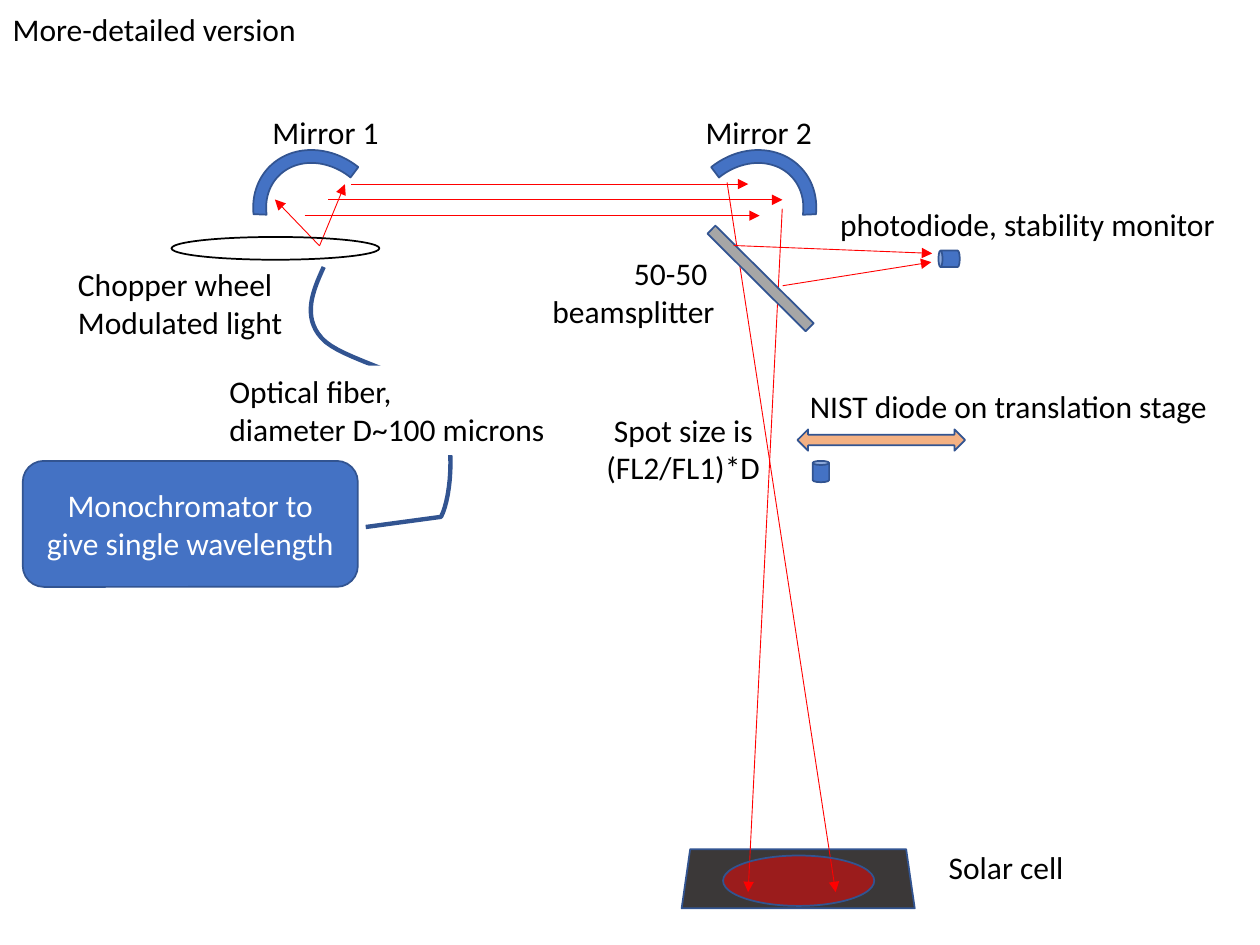
from lxml.etree import SubElement as Sub
from pptx import Presentation
from pptx.dml.color import RGBColor as RGB
from pptx.enum.shapes import MSO_CONNECTOR as Conn, MSO_SHAPE as Form
from pptx.enum.text import MSO_ANCHOR as Anchor, MSO_AUTO_SIZE as Fit, PP_ALIGN as Align
from pptx.oxml.ns import qn
from pptx.util import Pt

BLUE = RGB(0x44, 0x72, 0xC4)
NAVY = RGB(0x32, 0x54, 0x91)
RED = RGB(0xFF, 0, 0)
BLACK = RGB(0, 0, 0)
WHITE = RGB(0xFF, 0xFF, 0xFF)
GREY = RGB(0xA6, 0xA6, 0xA6)
DARK = RGB(0x3B, 0x38, 0x38)
PEACH = RGB(0xF4, 0xB1, 0x83)
LINE = 29   # height of a one-line label
PAIR = 51   # height of a two-line label
CAN = (9.4, 12.2)


def write(frame, lines, color=BLACK, align=Align.LEFT):
    frame.text = "\n".join(lines)
    for para in frame.paragraphs:
        para.alignment = align
        para.font.name = "Calibri"
        para.font.size = Pt(18)
        para.font.color.rgb = color


def label(slide, x, y, w, lines, align=Align.LEFT):
    high = LINE if len(lines) == 1 else PAIR
    box = slide.shapes.add_textbox(Pt(x), Pt(y), Pt(w), Pt(high))
    write(box.text_frame, lines, align=align)
    box.text_frame.word_wrap = False
    box.text_frame.auto_size = Fit.SHAPE_TO_FIT_TEXT
    return box


def paint(shape, fill, line=NAVY, width=1):
    shape.shadow.inherit = False
    if fill is None:
        shape.fill.background()
    else:
        shape.fill.solid()
        shape.fill.fore_color.rgb = fill
    shape.line.color.rgb = line
    shape.line.width = Pt(width)


def add(slide, form, x, y, w, h, fill, line=NAVY, turn=0):
    shape = slide.shapes.add_shape(form, Pt(x), Pt(y), Pt(w), Pt(h))
    paint(shape, fill, line)
    shape.rotation = turn
    return shape


def ray(slide, x1, y1, x2, y2):
    """Draw a thin red light ray with its arrowhead at the second point."""
    line = slide.shapes.add_connector(Conn.STRAIGHT, Pt(x1), Pt(y1), Pt(x2), Pt(y2))
    line.line.color.rgb = RED
    line.line.width = Pt(0.5)
    props = line._element.spPr
    Sub(props.find(qn("a:ln")), qn("a:tailEnd"), type="triangle")
    Sub(props, qn("a:effectLst"))


def curve(p0, p1, p2, p3, steps=16):
    """Return points along a cubic Bezier curve, without its start."""
    points = []
    for i in range(1, steps + 1):
        t = i / steps
        u = 1 - t
        points.append(tuple(
            u**3 * a + 3 * u * u * t * b + 3 * u * t * t * c + t**3 * d
            for a, b, c, d in zip(p0, p1, p2, p3)))
    return points


def header(slide, x, y, w, h):
    title = slide.shapes.title
    title.left, title.top, title.width, title.height = Pt(x), Pt(y), Pt(w), Pt(h)
    write(title.text_frame, ["More-detailed version"])
    title.text_frame.vertical_anchor = Anchor.TOP
    title.text_frame.auto_size = Fit.NONE


def mirrors(slide, x, y, w):
    size = 71.3
    for left, turn in ((x, 313.5), (x + w - size, 46.5)):
        arc = add(slide, Form.BLOCK_ARC, left, y + 22, size, 82, BLUE, turn=turn)
        for i, value in enumerate((137.326, 212.143, 0.104)):
            arc.adjustments[i] = value
    arc._element.spPr.find(qn("a:xfrm")).set("flipH", "1")
    for dx, dy in ((9.5, 53), (49.5, 44.3)):
        ray(slide, x + 35, y + 79.5, x + dx, y + dy)
    for row, (start, end) in enumerate(((53, 280), (40, 299.5), (26.5, 286.5))):
        dy = y + 44.2 + 9 * row
        ray(slide, x + start, dy, x + end, dy)
    for left, text in ((x + 1, "Mirror 1"), (x + 248.5, "Mirror 2")):
        label(slide, left, y, 75, [text])


def cell(slide, x, y, w, h):
    """Draw the solar cell, the rays focused on it and the lit spot."""
    plate = add(slide, Form.TRAPEZOID, x, y, w, h, DARK)
    plate.adjustments[0] = 0.145
    ray(slide, x + 26, y - 381, x + 88, y + 24.5)
    ray(slide, x + 57.5, y - 366, x + 38, y + 24.5)
    spot = add(slide, Form.OVAL, x + 23.7, y + 3.6, 86.4, 28.8, RED)
    tint = spot._element.spPr.find(qn("a:solidFill"))[0]
    Sub(tint, qn("a:alpha"), val="49000")
    label(slide, x + 145.5, y - 4.5, 85, ["Solar cell"])


def source(slide, x, y):
    """Draw the monochromator, the fiber and the chopper wheel."""
    add(slide, Form.OVAL, x + 85, y, 118.8, 13, None, BLACK)
    label(slide, x + 24.5, y + 12.5, 132.5, ["Chopper wheel", "Modulated light"])

    box = add(slide, Form.ROUNDED_RECTANGLE, x, y + 128, 191.5, 72, BLUE)
    write(box.text_frame, ["Monochromator to give single wavelength"], WHITE, Align.CENTER)
    box.text_frame.vertical_anchor = Anchor.MIDDLE

    foot, bend = (196, 165.8), (239, 160)
    neck, waist, tip = (237, 95), (170.6, 57.6), (172, 17.2)
    bends = [bend]
    bends += curve(bend, (245.5, 147.6), (247.6, 111.6), neck)
    bends += curve(neck, (225.4, 77.7), (181.4, 70.5), waist)
    bends += curve(waist, (159.8, 45.4), (165.6, 31), tip)
    path = slide.shapes.build_freeform(Pt(x + foot[0]), Pt(y + foot[1]))
    path.add_line_segments([(Pt(x + a), Pt(y + b)) for a, b in bends], close=False)
    paint(path.convert_to_shape(), None, width=2.5)

    note = label(slide, x + 111, y + 73.5, 196.6, ["Optical fiber,", "diameter D~100 microns"])
    note.fill.solid()
    note.fill.fore_color.rgb = WHITE


def splitter(slide, x, y):
    """Draw the beamsplitter and the photodiode it feeds."""
    add(slide, Form.RECTANGLE, x + 124.6, y + 5.7, 6.5, 79.2, GREY, turn=134.8)
    add(slide, Form.CAN, x + 231, y + 28, *CAN, BLUE, turn=270)
    label(slide, x, y + 28, 108.7, ["50-50 ", "beamsplitter"], Align.RIGHT)
    ray(slide, x + 112.5, y + 26.5, x + 226, y + 31)
    ray(slide, x + 140.5, y + 49.5, x + 225.5, y + 36)
    label(slide, x + 166.3, y, 230.4, ["photodiode, stability monitor"])


def stage(slide, x, y):
    """Draw the sliding reference diode beside the focal spot."""
    add(slide, Form.CAN, x + 126.7, y + 46, *CAN, BLUE)
    add(slide, Form.LEFT_RIGHT_ARROW, x + 118, y + 28, 95.8, 12.2, PEACH)
    label(slide, x + 118, y, 244, ["NIST diode on translation stage"])
    label(slide, x, y + 13.7, 103.7, ["Spot size is ", "(FL2/FL1)*D"], Align.RIGHT)


def main():
    deck = Presentation()
    deck.slide_width, deck.slide_height = Pt(720), Pt(540)
    slide = deck.slides.add_slide(deck.slide_layouts[5])
    header(slide, 0, 2, 328, 51)
    mirrors(slide, 147.6, 61, 316)
    cell(slide, 389.5, 485.3, 133.2, 33.8)
    source(slide, 13, 135.4)
    splitter(slide, 306.7, 113.8)
    stage(slide, 337.7, 217.4)
    deck.save("out.pptx")


if __name__ == "__main__":
    main()
